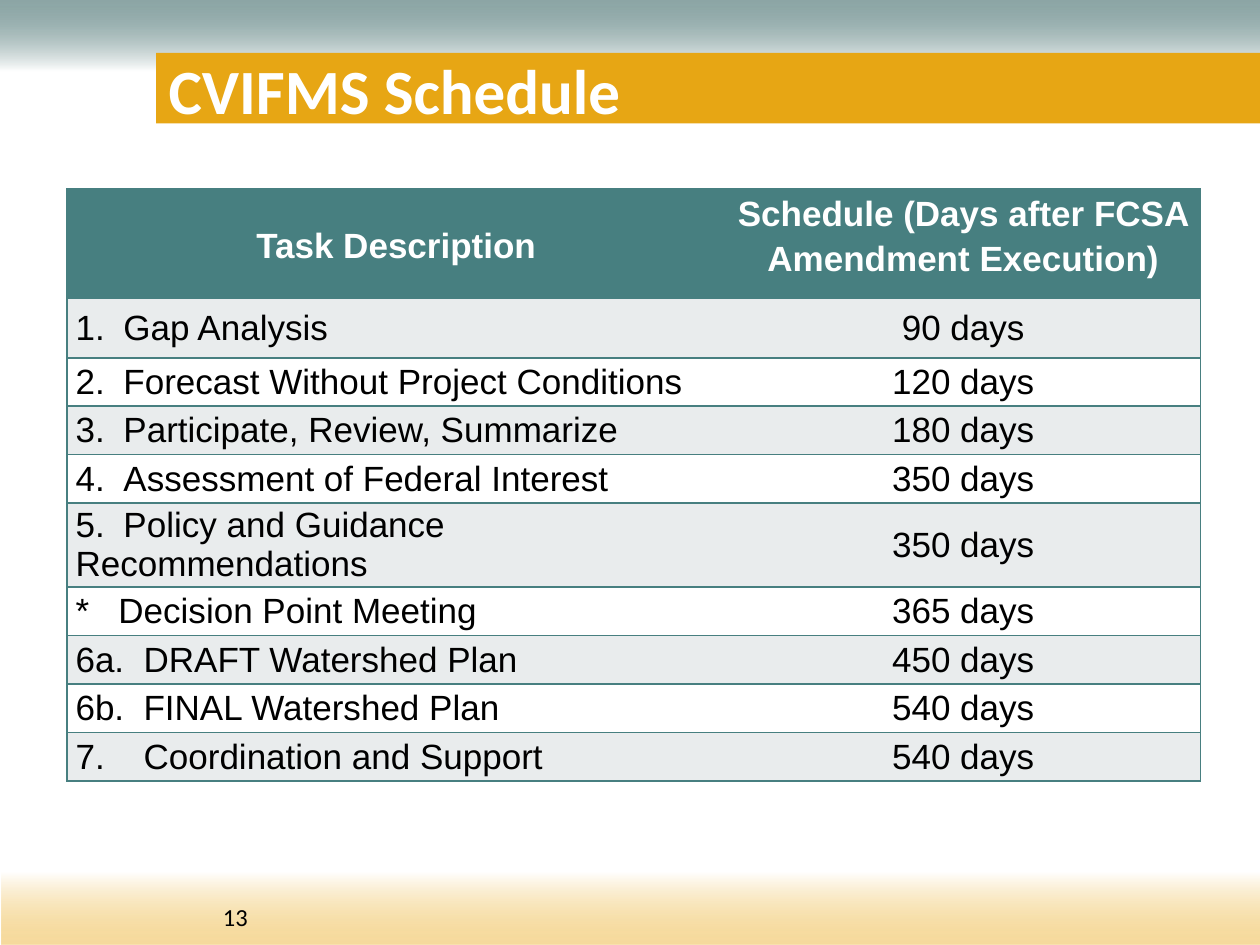
from lxml.etree import SubElement
from pptx import Presentation
from pptx.dml.color import RGBColor
from pptx.enum.shapes import MSO_SHAPE
from pptx.enum.text import MSO_ANCHOR, PP_ALIGN
from pptx.oxml.ns import qn
from pptx.util import Inches, Pt


def rgb(code):
    return RGBColor.from_string(code)


def style(para, font, size, color, bold=False):
    for run in para.runs:
        run.font.name = font
        run.font.size = Pt(size)
        run.font.bold = bold
        run.font.color.rgb = rgb(color)


TEAL = "477F80"

deck = Presentation()
deck.slide_width = Inches(10)
deck.slide_height = Inches(7.5)
slide = deck.slides.add_slide(deck.slide_layouts[6])

bands = [
    (-0.01, 0, 10.03, 1.09, "215352", 270),
    (0.01, 6.39, 9.99, 1.11, "EEB840", 90),
]
for left, top, width, height, color, angle in bands:
    band = slide.shapes.add_shape(
        MSO_SHAPE.RECTANGLE, Inches(left), Inches(top), Inches(width), Inches(height)
    )
    band.shadow.inherit = False
    band.line.fill.background()
    band.fill.gradient()
    band.fill.gradient_angle = angle
    start, end = band.fill.gradient_stops
    start.color.rgb = rgb(color)
    start.position = 0
    end.color.rgb = rgb("FFFFFF")
    end.position = 0.52
    tint = next(band._element.iter(qn("a:srgbClr")))
    SubElement(tint, qn("a:alpha"), val="51000")

bar = slide.shapes.add_shape(
    MSO_SHAPE.RECTANGLE, Inches(1.24), Inches(0.42), Inches(8.76), Inches(0.56)
)
bar.shadow.inherit = False
bar.fill.solid()
bar.fill.fore_color.rgb = rgb("E7A614")
bar.line.fill.background()

labels = [
    ("13", 1.67, 7.11, 0.85, 0.34, 14, "000000", False),
    ("CVIFMS Schedule", 1.24, 0.42, 8.77, 0.58, 36, "FFFFFF", True),
]
for text, left, top, width, height, size, color, bold in labels:
    box = slide.shapes.add_textbox(
        Inches(left), Inches(top), Inches(width), Inches(height)
    )
    frame = box.text_frame
    frame.word_wrap = True
    frame.vertical_anchor = MSO_ANCHOR.MIDDLE if bold else MSO_ANCHOR.TOP
    frame.text = text
    style(frame.paragraphs[0], "Calibri", size, color, bold)

rows = [
    ("Task Description", "Schedule (Days after FCSA Amendment Execution)"),
    ("1.\tGap Analysis", "90 days"),
    ("2.\tForecast Without Project Conditions", "120 days"),
    ("3.\tParticipate, Review, Summarize", "180 days"),
    ("4.\tAssessment of Federal Interest", "350 days"),
    ("5.\tPolicy and Guidance Recommendations", "350 days"),
    ("*\tDecision Point Meeting", "365 days"),
    ("6a.\tDRAFT Watershed Plan", "450 days"),
    ("6b.\tFINAL Watershed Plan", "540 days"),
    ("7.\tCoordination and Support", "540 days"),
]
tall = {0: 0.87, 1: 0.47, 5: 0.47}
tabs = {6: 0.34, 7: 0.54, 8: 0.54, 9: 0.54}

table = slide.shapes.add_table(
    len(rows), 2, Inches(0.53), Inches(1.5), Inches(9), Inches(4.5)
).table
table.columns[0].width = Inches(5.23)
table.columns[1].width = Inches(3.77)

for r, row in enumerate(rows):
    table.rows[r].height = Inches(tall.get(r, 0.385))
    head = r == 0
    for c, text in enumerate(row):
        cell = table.cell(r, c)
        cell.margin_left = cell.margin_right = Inches(0.07)
        cell.margin_top = cell.margin_bottom = 0
        cell.vertical_anchor = MSO_ANCHOR.TOP if head and c else MSO_ANCHOR.MIDDLE
        cell.text_frame.text = text
        para = cell.text_frame.paragraphs[0]
        if head or c:
            para.alignment = PP_ALIGN.CENTER
        else:
            para.alignment = PP_ALIGN.LEFT
            stops = SubElement(para._p.get_or_add_pPr(), qn("a:tabLst"))
            SubElement(
                stops, qn("a:tab"), pos=str(Inches(tabs.get(r, 0.38))), algn="l"
            )
        if head:
            para.line_spacing = 1.15
        style(para, "Arial", 20, "FFFFFF" if head else "000000", head)

        props = cell._tc.get_or_add_tcPr()
        for side in ("lnR", "lnT", "lnB") if c else ("lnL", "lnT", "lnB"):
            edge = SubElement(props, qn("a:" + side), w=str(Pt(1)))
            paint = SubElement(edge, qn("a:solidFill"))
            SubElement(paint, qn("a:srgbClr"), val=TEAL)
        cell.fill.solid()
        shade = TEAL if head else "E9ECED" if r % 2 else "FFFFFF"
        cell.fill.fore_color.rgb = rgb(shade)

# the inner vertical edge comes from the table style, so the style is cleared
table._tbl.tblPr.find(qn("a:tableStyleId")).text = "{2D5ABB26-0587-4C30-8999-92F81FD0307C}"

deck.save("out.pptx")
